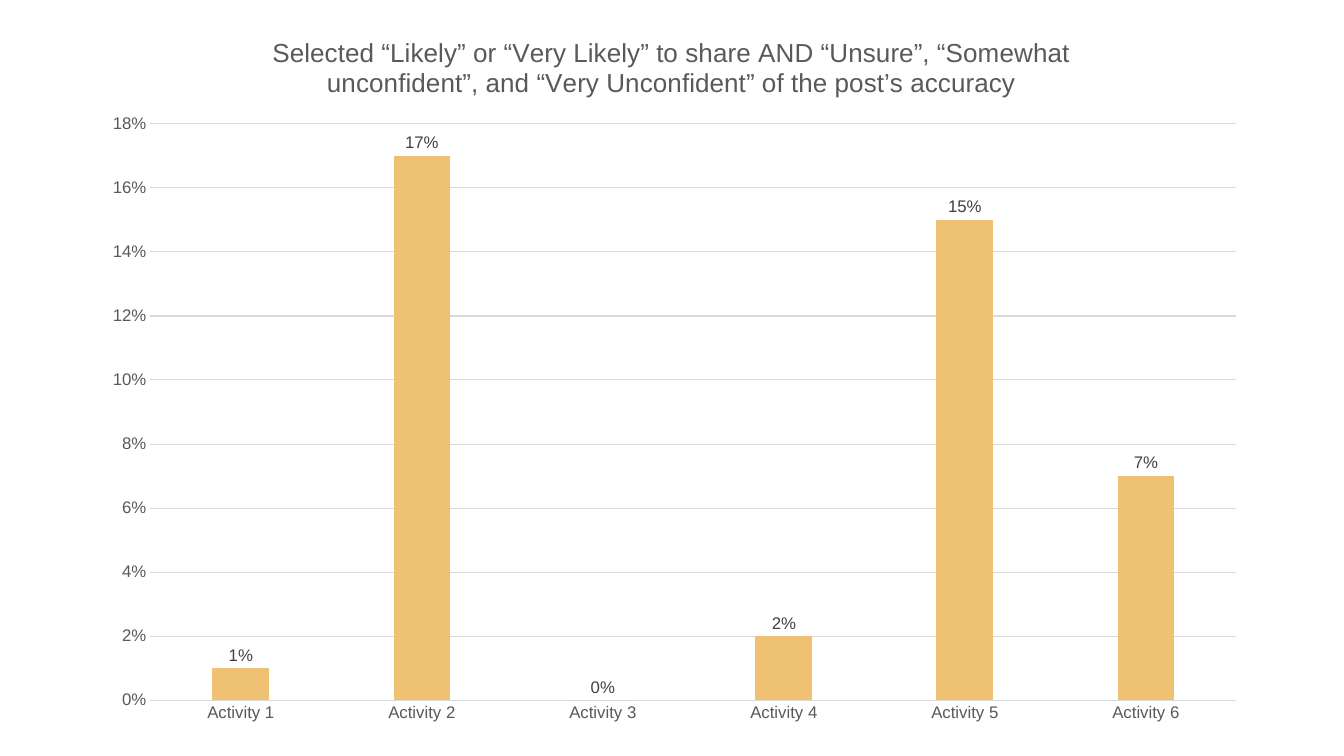
from lxml.etree import SubElement
from pptx import Presentation
from pptx.chart.data import CategoryChartData
from pptx.dml.color import RGBColor
from pptx.enum.chart import XL_CHART_TYPE as ChartType
from pptx.enum.chart import XL_LABEL_POSITION as LabelPosition
from pptx.enum.chart import XL_TICK_MARK as TickMark
from pptx.oxml.ns import qn
from pptx.util import Cm, Pt

TITLE = ("Selected “Likely” or “Very Likely” to share AND “Unsure”, “Somewhat "
         "unconfident”, and “Very Unconfident” of the post’s accuracy")
SHARES = [0.01, 0.17, 0, 0.02, 0.15, 0.07]
TEXT_GREY = "595959"
LABEL_GREY = "404040"
LINE_GREY = "D9D9D9"
BAR_GOLD = "EEC272"


def color(hex_string):
    return RGBColor.from_string(hex_string)


def style_font(font, size=12, hex_string=TEXT_GREY):
    font.name = "Arial"
    font.size = Pt(size)
    font.bold = False
    font.color.rgb = color(hex_string)


def write_text(text_frame, text, **font_format):
    run = text_frame.paragraphs[0].add_run()
    run.text = text
    style_font(run.font, **font_format)


def style_line(line):
    line.color.rgb = color(LINE_GREY)
    line.width = Pt(0.75)


def style_axis(axis):
    axis.major_tick_mark = axis.minor_tick_mark = TickMark.NONE
    style_font(axis.tick_labels.font)


def place_plot(chart, **fractions):
    plot_area = chart._chartSpace.chart.plotArea
    layout = plot_area.find(qn("c:layout"))
    if layout is None:
        layout = SubElement(plot_area, qn("c:layout"))
        plot_area.insert(0, layout)
    manual = SubElement(layout, qn("c:manualLayout"))
    settings = {"layoutTarget": "inner", "xMode": "edge", "yMode": "edge", **fractions}
    for name, value in settings.items():
        SubElement(manual, qn(f"c:{name}")).set("val", str(value))


def add_share_chart(slide):
    chart_data = CategoryChartData(number_format="0%")
    chart_data.categories = [f"Activity {number}" for number in range(1, len(SHARES) + 1)]
    chart_data.add_series("Series 1", SHARES)
    chart = slide.shapes.add_chart(ChartType.COLUMN_CLUSTERED, Cm(2.33), Cm(0.28),
                                   Cm(29.21), Cm(18.34), chart_data).chart
    style_font(chart.font, size=10, hex_string="000000")
    chart.has_legend = False
    write_text(chart.chart_title.text_frame, TITLE, size=18.6)
    chart.chart_title.include_in_layout = False
    place_plot(chart, x=0.05, y=0.155, w=0.937, h=0.792)

    style_axis(chart.category_axis)
    style_line(chart.category_axis.format.line)

    value_axis = chart.value_axis
    style_axis(value_axis)
    value_axis.minimum_scale = 0
    value_axis.maximum_scale = 0.18
    value_axis.major_unit = 0.02
    value_axis.tick_labels.number_format = "0%"
    value_axis.tick_labels.number_format_is_linked = False
    value_axis.format.line.fill.background()
    style_line(value_axis.major_gridlines.format.line)

    plot = chart.plots[0]
    plot.gap_width = 219
    plot.overlap = -27
    plot.vary_by_categories = False
    series = plot.series[0]
    series.format.fill.solid()
    series.format.fill.fore_color.rgb = color(BAR_GOLD)

    labels = series.data_labels
    labels.show_value = True
    labels.number_format = "0%"
    labels.number_format_is_linked = False
    labels.position = LabelPosition.OUTSIDE_END
    style_font(labels.font, hex_string=LABEL_GREY)


def main():
    presentation = Presentation()
    presentation.slide_width = Cm(33.87)
    presentation.slide_height = Cm(19.05)
    slide = presentation.slides.add_slide(presentation.slide_layouts[6])
    add_share_chart(slide)
    presentation.save("out.pptx")


if __name__ == "__main__":
    main()
